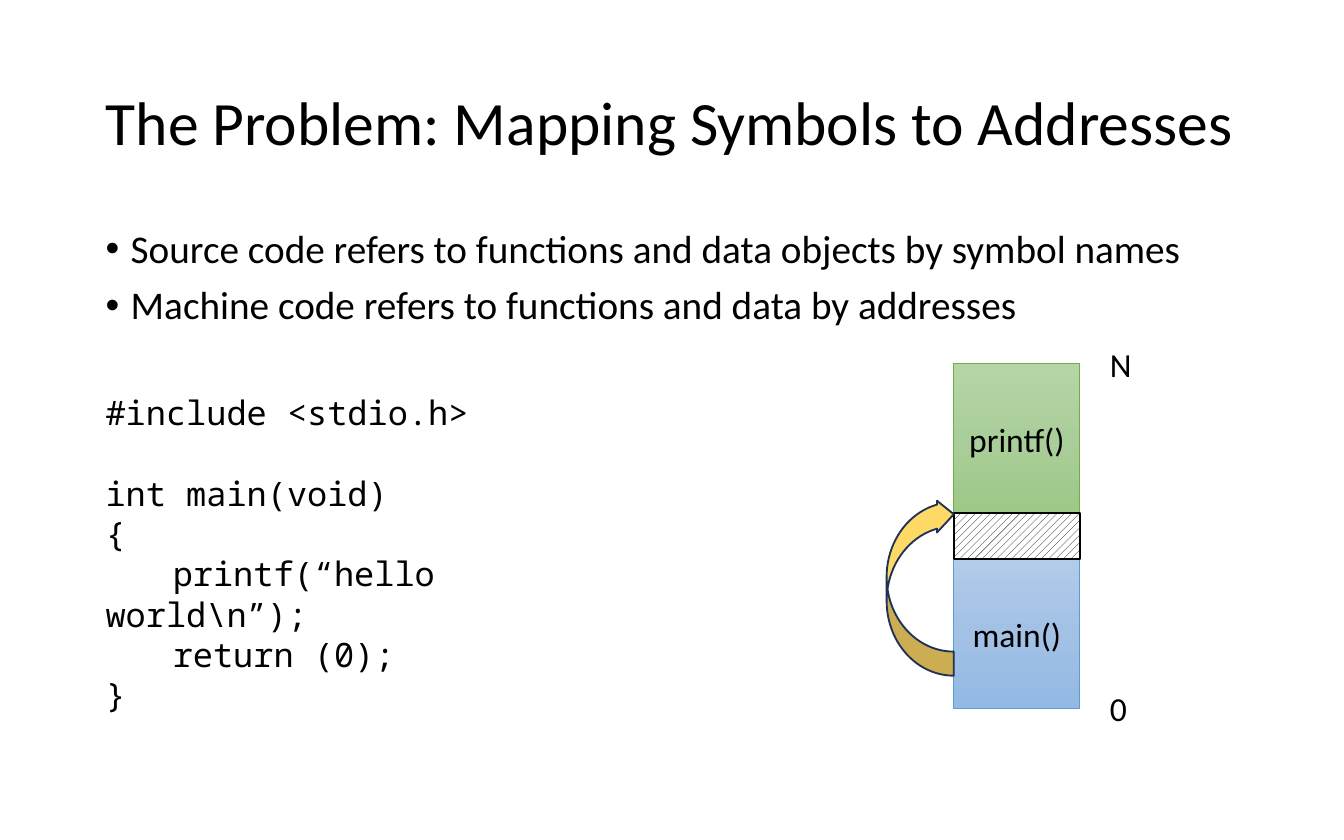
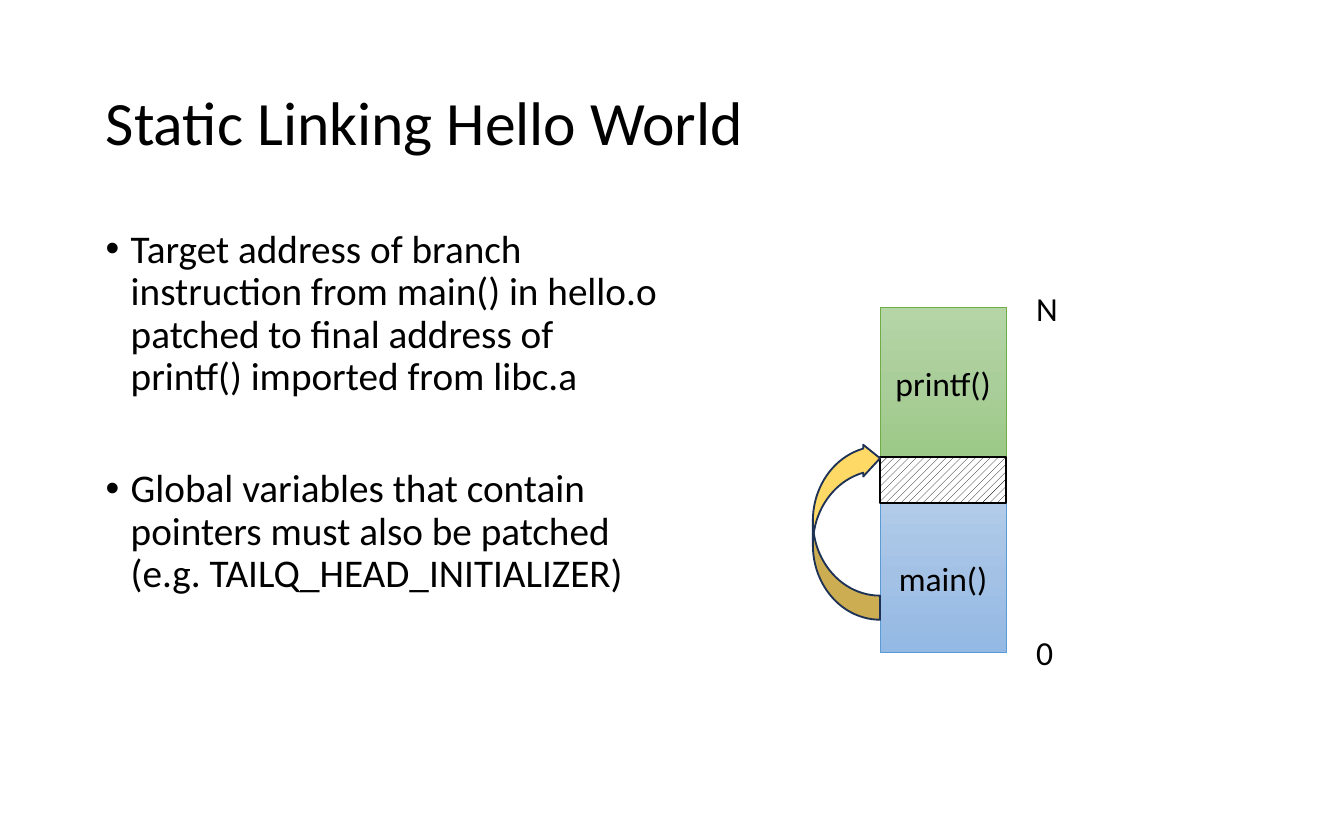
from copy import deepcopy

from lxml import etree
from pptx import Presentation
from pptx.dml.color import RGBColor
from pptx.enum.dml import MSO_PATTERN
from pptx.enum.shapes import MSO_SHAPE
from pptx.enum.text import MSO_ANCHOR, MSO_AUTO_SIZE, PP_ALIGN
from pptx.oxml.ns import qn
from pptx.util import Pt

RECTANGLE = MSO_SHAPE.RECTANGLE
CURVED_ARROW = MSO_SHAPE.CURVED_RIGHT_ARROW
HATCH = MSO_PATTERN.WIDE_UPWARD_DIAGONAL
MIDDLE, TOP = MSO_ANCHOR.MIDDLE, MSO_ANCHOR.TOP
LEFT, CENTER = PP_ALIGN.LEFT, PP_ALIGN.CENTER
FIXED, GROW = MSO_AUTO_SIZE.NONE, MSO_AUTO_SIZE.SHAPE_TO_FIT_TEXT

BLACK = RGBColor(0x00, 0x00, 0x00)
WHITE = RGBColor(0xFF, 0xFF, 0xFF)
BLUES = [RGBColor(0xB1, 0xCB, 0xE9), RGBColor(0xA3, 0xC1, 0xE5), RGBColor(0x93, 0xB9, 0xE4)]
BLUE_EDGE = RGBColor(0x5B, 0x9B, 0xD5)
GREENS = [RGBColor(0xB5, 0xD5, 0xA7), RGBColor(0xAA, 0xCE, 0x9A), RGBColor(0x9C, 0xC9, 0x87)]
GREEN_EDGE = RGBColor(0x70, 0xAD, 0x47)
GOLD = RGBColor(0xFF, 0xD9, 0x66)
NAVY = RGBColor(0x1E, 0x32, 0x56)

SANS, MONO = "Calibri", "Noto Sans Mono"
TITLE_SIZE, BULLET_SIZE, LABEL_SIZE = 33, 21, 18
MARGIN, CONTENT_WIDTH, BODY_TOP = 49.5, 621, 119.5
BULLET_INDENT, TAB_STOP = 13.5, 36
CODE_LINE = 21.6

# Each line of code with the space above it
CODE = [
    ("#include <stdio.h>", 0),
    ("int main(void)", CODE_LINE),
    ("{", 0),
    ("\tprintf(“hello world\\n”);", 0),
    ("\treturn (0);", 0),
    ("}", 0),
]
SLIDES = [
    {
        "title": "The Problem: Mapping Symbols to Addresses",
        "bullets": [
            "Source code refers to functions and data objects by symbol names",
            "Machine code refers to functions and data by addresses",
        ],
        "bullet_box": (CONTENT_WIDTH, 87),
        "bullet_gap": 7.5,
        "code": CODE,
        "memory_at": (511, 195),
    },
    {
        "title": "Static Linking Hello World",
        "bullets": [
            "Target address of branch instruction from main() in hello.o "
            "patched to final address of printf() imported from libc.a",
            "Global variables that contain pointers must also be patched "
            "(e.g. TAILQ_HEAD_INITIALIZER)",
        ],
        "bullet_box": (CONTENT_WIDTH / 2, 274),
        "bullet_gap": 37.5,
        "code": [],
        "memory_at": (471.5, 165),
    },
]
MEMORY_WIDTH, FUNCTION_HEIGHT, GAP_HEIGHT = 67.5, 80, 24.5
ARROW_WIDTH, ARROW_HEIGHT, ARROW_RISE = 36, 95, 8
ARROW_ADJUSTMENTS = (0.358, 0.473, 0.25)
LABEL_HEIGHT, LABEL_OFFSET = 29, 76.5


def set_font(paragraph, size, face=SANS):
    font = paragraph.font
    font.size, font.name = Pt(size), face
    font.color.rgb = BLACK


def add_text_box(slide, left, top, width, height, lines, fit=FIXED):
    frame = slide.shapes.add_textbox(Pt(left), Pt(top), Pt(width), Pt(height)).text_frame
    frame.word_wrap = True
    frame.auto_size = fit
    frame.vertical_anchor = TOP
    frame.text = "\n".join(lines)
    return frame.paragraphs


def set_title(slide, wording):
    title = slide.shapes.title
    title.left, title.top = Pt(MARGIN), Pt(24)
    title.width, title.height = Pt(CONTENT_WIDTH), Pt(87)
    frame = title.text_frame
    frame.text = wording
    frame.word_wrap = True
    frame.auto_size = FIXED
    frame.vertical_anchor = MIDDLE
    heading = frame.paragraphs[0]
    heading.alignment = LEFT
    heading.line_spacing = 0.9
    set_font(heading, TITLE_SIZE)


def add_bullets(slide, bullets, box, gap):
    for i, bullet in enumerate(add_text_box(slide, MARGIN, BODY_TOP, *box, bullets)):
        bullet.line_spacing = 0.9
        bullet.space_before = Pt(gap if i else 7.5)
        properties = bullet._p.get_or_add_pPr()
        properties.set("marL", str(Pt(BULLET_INDENT)))
        properties.set("indent", str(-Pt(BULLET_INDENT)))
        etree.SubElement(properties, qn("a:buFont"), typeface="Arial")
        etree.SubElement(properties, qn("a:buChar"), char="•")
        set_font(bullet, BULLET_SIZE)


def add_code(slide, code):
    lines = [line for line, _ in code]
    paragraphs = add_text_box(slide, MARGIN, 206.5, 291, 160, lines, GROW)
    for paragraph, (_, space) in zip(paragraphs, code):
        paragraph.space_before = Pt(space)
        tabs = etree.SubElement(paragraph._p.get_or_add_pPr(), qn("a:tabLst"))
        etree.SubElement(tabs, qn("a:tab"), pos=str(Pt(TAB_STOP)), algn="l")
        set_font(paragraph, LABEL_SIZE, MONO)


def add_outlined(slide, kind, left, top, width, height, edge, weight):
    shape = slide.shapes.add_shape(kind, Pt(left), Pt(top), Pt(width), Pt(height))
    shape.shadow.inherit = False
    shape.line.color.rgb = edge
    shape.line.width = Pt(weight)
    return shape


def add_function(slide, name, left, top, shades, edge):
    block = add_outlined(slide, RECTANGLE, left, top, MEMORY_WIDTH, FUNCTION_HEIGHT, edge, 0.5)
    block.fill.gradient()
    block.fill.gradient_angle = 270
    stop_list = block._element.spPr.find(".//" + qn("a:gsLst"))
    stop_list.append(deepcopy(stop_list[0]))
    for i, (stop, shade) in enumerate(zip(block.fill.gradient_stops, shades)):
        stop.position = i / 2
        stop.color.rgb = shade
    frame = block.text_frame
    frame.text = name
    frame.vertical_anchor = MIDDLE
    frame.paragraphs[0].alignment = CENTER
    set_font(frame.paragraphs[0], LABEL_SIZE)


def add_memory(slide, left, top):
    """Draw the address space, with a call from main() up to printf()."""
    gap_top = top + FUNCTION_HEIGHT
    main_top = gap_top + GAP_HEIGHT
    bottom = main_top + FUNCTION_HEIGHT

    add_function(slide, "main()", left, main_top, BLUES, BLUE_EDGE)
    add_function(slide, "printf()", left, top, GREENS, GREEN_EDGE)

    gap = add_outlined(slide, RECTANGLE, left, gap_top, MEMORY_WIDTH, GAP_HEIGHT, BLACK, 1)
    gap.fill.patterned()
    gap.fill.pattern = HATCH
    gap.fill.fore_color.rgb = BLACK
    gap.fill.back_color.rgb = WHITE

    call = add_outlined(slide, CURVED_ARROW, left - ARROW_WIDTH, gap_top - ARROW_RISE,
                        ARROW_WIDTH, ARROW_HEIGHT, NAVY, 1)
    call.fill.solid()
    call.fill.fore_color.rgb = GOLD
    call._element.spPr.find(qn("a:xfrm")).set("flipV", "1")
    for i, adjustment in enumerate(ARROW_ADJUSTMENTS):
        call.adjustments[i] = adjustment

    for address, edge, width in (("0", bottom, 18), ("N", top, 27.5)):
        label = add_text_box(slide, left + LABEL_OFFSET, edge - LABEL_HEIGHT / 2,
                             width, LABEL_HEIGHT, [address], GROW)
        set_font(label[0], LABEL_SIZE)


def main():
    deck = Presentation()
    deck.slide_width, deck.slide_height = Pt(720), Pt(450)
    title_only = deck.slide_layouts[5]
    for content in SLIDES:
        slide = deck.slides.add_slide(title_only)
        set_title(slide, content["title"])
        add_bullets(slide, content["bullets"], content["bullet_box"], content["bullet_gap"])
        if content["code"]:
            add_code(slide, content["code"])
        add_memory(slide, *content["memory_at"])
    deck.save("out.pptx")


if __name__ == "__main__":
    main()
